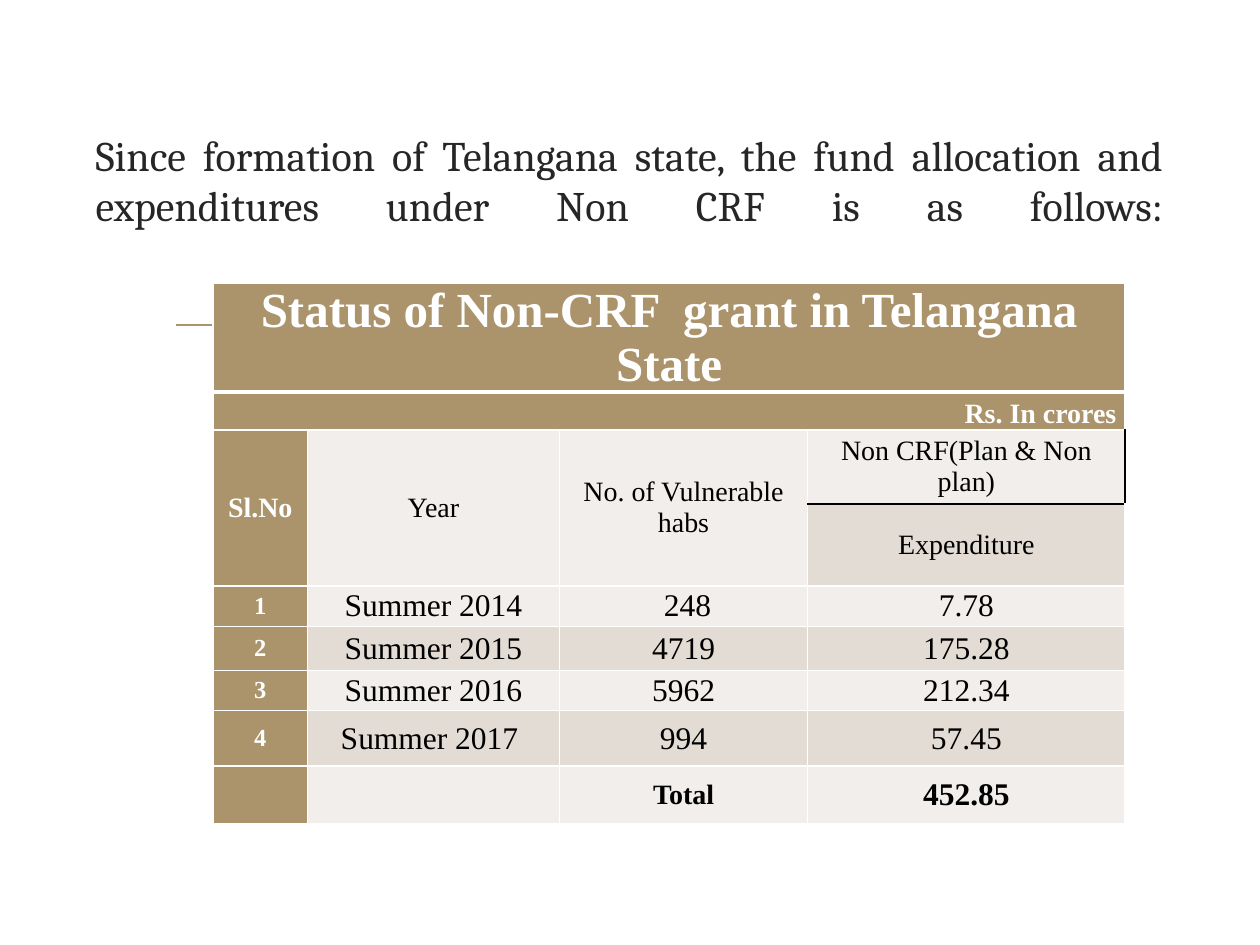
from lxml import etree
from pptx import Presentation
from pptx.dml.color import RGBColor
from pptx.enum.shapes import MSO_CONNECTOR
from pptx.enum.text import MSO_ANCHOR, MSO_AUTO_SIZE, PP_ALIGN
from pptx.oxml.ns import qn
from pptx.util import Inches, Pt

MID, LOW = MSO_ANCHOR.MIDDLE, MSO_ANCHOR.BOTTOM
JUST, MID_AL, RIGHT = PP_ALIGN.JUSTIFY, PP_ALIGN.CENTER, PP_ALIGN.RIGHT
STRAIGHT = MSO_CONNECTOR.STRAIGHT

TITLE = ("\vSince formation of Telangana state, the fund allocation and "
         "expenditures under Non CRF is as follows:\v")
ROWS = [
    ["Status of Non-CRF  grant in Telangana State", "", "", ""],
    ["Rs. In crores", "", "", ""],
    ["Sl.No", "Year", "No. of Vulnerable habs", "Non CRF(Plan & Non plan)"],
    ["", "", "", "Expenditure"],
    ["1", "Summer 2014", " 248", "7.78"],
    ["2", "Summer 2015", "4719", "175.28"],
    ["3", "Summer 2016", "5962", "212.34"],
    ["4", "Summer 2017 ", "994", "57.45"],
    ["", "", "Total", "452.85"],
]
WIDTHS = [0.75, 2, 1.97, 2.52]
HEIGHTS = [0.46, 0.3, 0.59, 0.65, 0.32, 0.35, 0.32, 0.44, 0.46]
MERGES = [(0, 0, 0, 3), (1, 0, 1, 3), (2, 0, 3, 0), (2, 1, 3, 1), (2, 2, 3, 2)]
BANNER, UNIT, HEAD, SUB, DATA, TOTAL = 0, 1, 2, 3, 4, 8

THEME = {
    "gold": "AB946B", "light": "F1EEEB", "band": "E2DCD4",
    "white": "FFFFFF", "black": "000000", "ink": "262626",
    "title_font": "Cambria", "font": "Times New Roman",
    "title": 24, "banner": 28, "head": 16, "number": 14, "body": 18,
}
# Edges that differ from the thin white grid: (row, column) -> side: colour, points
EDGES = {
    (HEAD, 3): {"R": ("black", 1), "B": ("black", 1)},
    (SUB, 3): {"T": ("black", 1)},
    **{(BANNER, col): {"B": ("white", 3)} for col in range(len(WIDTHS))},
}


def tint(name):
    return RGBColor.from_string(THEME[name])


def put(thing, values):
    for name, value in values.items():
        setattr(thing, name, value)


def style(para, align, font, size, color, bold=False):
    para.alignment = align
    put(para.font, {"name": font, "size": Pt(THEME[size]), "bold": bold})
    para.font.color.rgb = tint(color)


def edge(cell, side, color, points):
    props = cell._tc.get_or_add_tcPr()
    line = etree.SubElement(props, qn(f"a:ln{side}"), w=str(Pt(points)))
    fill = etree.SubElement(line, qn("a:solidFill"))
    etree.SubElement(fill, qn("a:srgbClr"), val=THEME[color])


def size_of(row, col):
    if row == BANNER:
        return "banner"
    if row < DATA or (row == TOTAL and col == 2):
        return "head"
    return "number" if col == 0 else "body"


def fill_cell(cell, row, col, text):
    top = row <= UNIT
    gold = top or col == 0
    for side in "LRTB":
        color, points = EDGES.get((row, col), {}).get(side, ("white", 1))
        edge(cell, side, color, points)
    cell.fill.solid()
    cell.fill.fore_color.rgb = tint(
        "gold" if gold else "band" if row % 2 else "light")
    put(cell, {"margin_left": Inches(0.07), "margin_right": Inches(0.07),
               "margin_top": 0, "margin_bottom": 0,
               "vertical_anchor": LOW if top else MID})
    if text:
        cell.text = text
        style(cell.text_frame.paragraphs[0], RIGHT if row == UNIT else MID_AL,
              THEME["font"], size_of(row, col), "white" if gold else "black",
              gold or row == TOTAL)


def add_title(slide):
    title = slide.shapes.title
    put(title, {"left": Inches(0.66), "top": Inches(0.84),
                "width": Inches(8.67), "height": Inches(1.17)})
    frame = title.text_frame
    put(frame, {"word_wrap": True, "auto_size": MSO_AUTO_SIZE.NONE,
                "vertical_anchor": MID})
    para = frame.paragraphs[0]
    para.text = TITLE
    style(para, JUST, THEME["title_font"], "title", "ink")


def add_rule(slide):
    rule = slide.shapes.add_connector(
        STRAIGHT, Inches(1.4), Inches(2.58), Inches(8.61), Inches(2.58))
    rule.line.color.rgb = tint("gold")
    rule.line.width = Pt(1.25)
    etree.SubElement(rule._element.spPr, qn("a:effectLst"))


def add_grid(slide):
    table = slide.shapes.add_table(
        len(ROWS), len(WIDTHS), Inches(1.69), Inches(2.25),
        Inches(sum(WIDTHS)), Inches(sum(HEIGHTS))).table
    put(table, {"first_row": False, "horz_banding": False})
    for column, width in zip(table.columns, WIDTHS):
        column.width = Inches(width)
    for row, height in zip(table.rows, HEIGHTS):
        row.height = Inches(height)
    for top, left, bottom, right in MERGES:
        table.cell(top, left).merge(table.cell(bottom, right))
    for row, texts in enumerate(ROWS):
        for col, text in enumerate(texts):
            fill_cell(table.cell(row, col), row, col, text)


def main():
    deck = Presentation()
    put(deck, {"slide_width": Inches(10), "slide_height": Inches(7.5)})
    slide = deck.slides.add_slide(deck.slide_layouts[5])
    slide.background.fill.solid()
    slide.background.fill.fore_color.rgb = tint("white")
    add_rule(slide)
    add_title(slide)
    add_grid(slide)
    deck.save("out.pptx")


if __name__ == "__main__":
    main()
